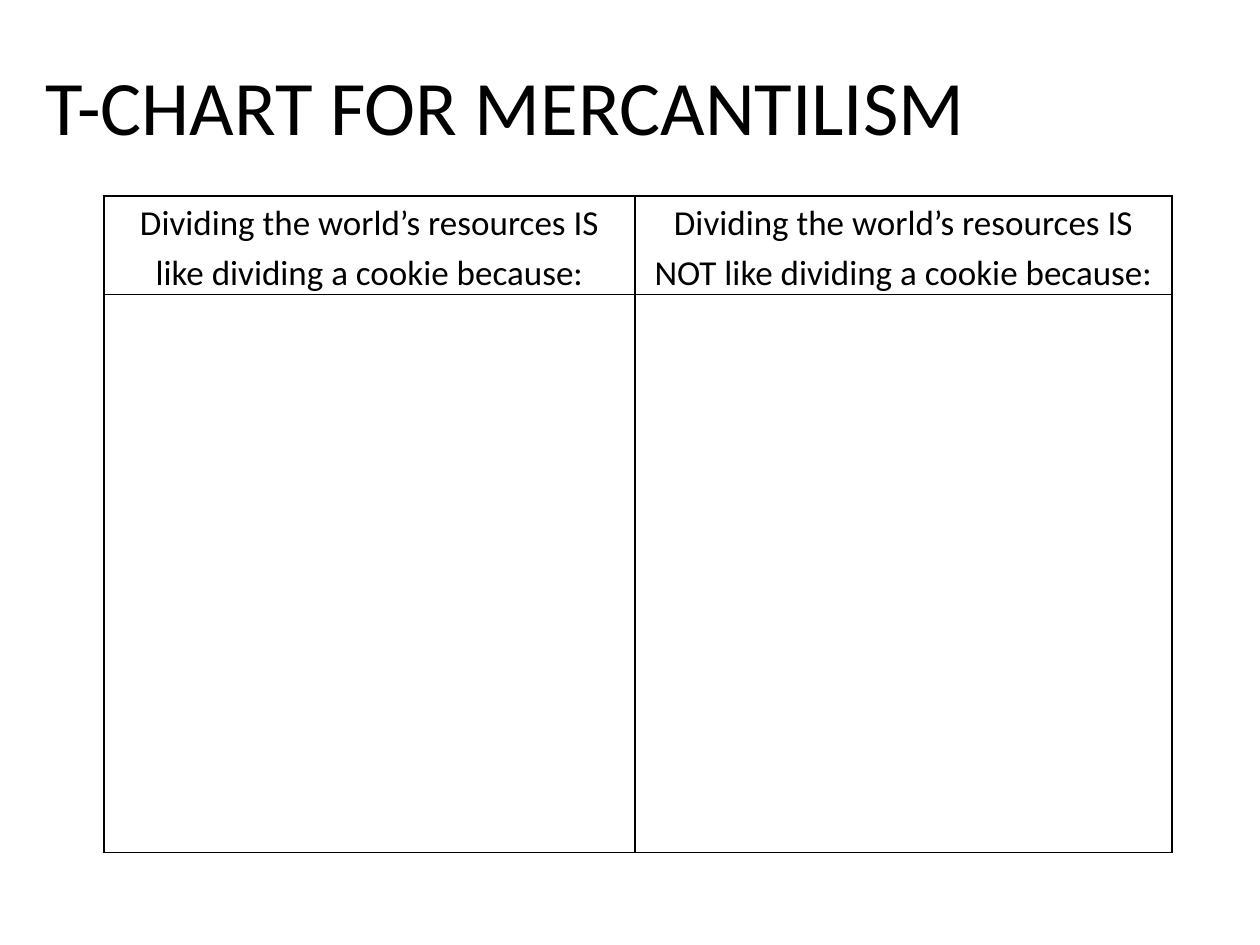
import pptx
import pptx.dml.color
import pptx.enum.text
import pptx.oxml
import pptx.oxml.ns
import pptx.util

SCALE = 914400 // 126  # EMU per px
FONT = "Calibri"
BLACK = "000000"
WHITE = "FFFFFF"
HEADINGS = [
    ["Dividing the world’s resources IS", "like dividing a cookie because:"],
    ["Dividing the world’s resources IS", "NOT like dividing a cookie because:"],
]


def px(length):
    return pptx.util.Emu(length * SCALE)


def color(hex_string):
    return pptx.dml.color.RGBColor.from_string(hex_string)


def style_paragraph(paragraph, size, spacing, alignment):
    paragraph.alignment = alignment
    paragraph.line_spacing = spacing
    paragraph.font.name = FONT
    paragraph.font.size = pptx.util.Pt(size)
    paragraph.font.bold = False
    paragraph.font.color.rgb = color(BLACK)


def style_cell(cell):
    cell.margin_left = cell.margin_right = px(6)
    cell.margin_top = cell.margin_bottom = 0
    # Borders come before the fill in the cell properties
    properties = cell._tc.get_or_add_tcPr()
    for side in ("lnL", "lnR", "lnT", "lnB"):
        properties.append(pptx.oxml.parse_xml(
            f'<a:{side} {pptx.oxml.ns.nsdecls("a")} w="{pptx.util.Pt(1)}">'
            f'<a:solidFill><a:srgbClr val="{BLACK}"/></a:solidFill></a:{side}>'))
    cell.fill.solid()
    cell.fill.fore_color.rgb = color(WHITE)


def add_title(slide, left, top, width, height):
    title = slide.shapes.title
    title.left, title.top, title.width, title.height = map(px, (left, top, width, height))
    frame = title.text_frame
    frame.text = "T-CHART FOR MERCANTILISM"
    frame.word_wrap = True
    frame.vertical_anchor = pptx.enum.text.MSO_ANCHOR.MIDDLE
    style_paragraph(frame.paragraphs[0], 44, 0.9, pptx.enum.text.PP_ALIGN.LEFT)


def add_t_chart(slide, left, top, width, height):
    heading_height, left_column = 87, 531
    table = slide.shapes.add_table(2, 2, px(left), px(top), px(width), px(height)).table
    table.first_row = table.horz_banding = False
    table.columns[0].width = px(left_column)
    table.columns[1].width = px(width - left_column)
    table.rows[0].height = px(heading_height)
    table.rows[1].height = px(height - heading_height)
    for cell in table.iter_cells():
        style_cell(cell)

    # Headings
    for column, lines in enumerate(HEADINGS):
        frame = table.cell(0, column).text_frame
        frame.text = "\n".join(lines)
        for paragraph in frame.paragraphs:
            style_paragraph(paragraph, 20, 1.15, pptx.enum.text.PP_ALIGN.CENTER)


def main():
    presentation = pptx.Presentation()
    presentation.slide_width = px(1260)
    presentation.slide_height = px(945)
    slide = presentation.slides.add_slide(presentation.slide_layouts[5])
    add_title(slide, 33, 38, 1139, 146)
    add_t_chart(slide, 104, 196, 1068, 645)
    presentation.save("out.pptx")


if __name__ == "__main__":
    main()
